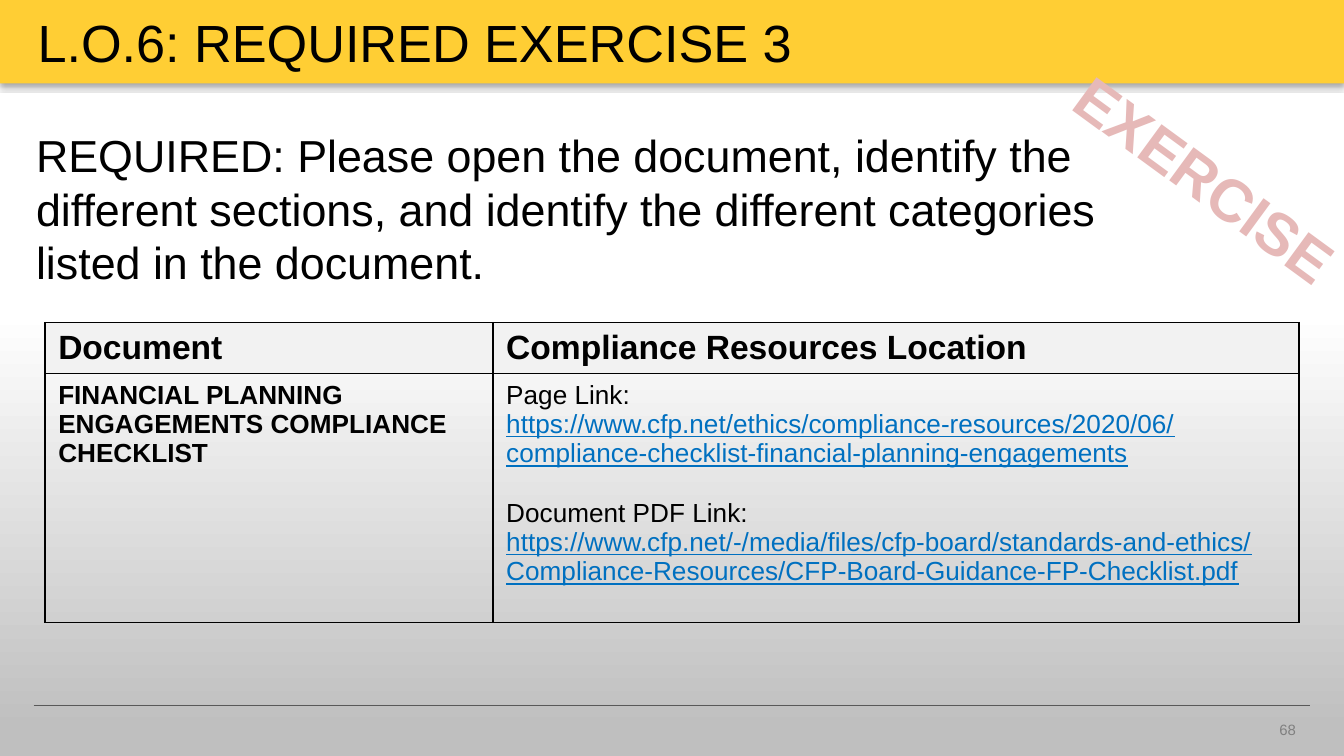
import pptx
import pptx.util
import pptx.oxml
import pptx.dml.color
import pptx.enum.shapes
import pptx.enum.text
import lxml.etree

Inches, Pt = pptx.util.Inches, pptx.util.Pt
RGB = pptx.dml.color.RGBColor
SHAPE = pptx.enum.shapes.MSO_SHAPE
ANCHOR = pptx.enum.text.MSO_ANCHOR
ALIGN = pptx.enum.text.PP_ALIGN
NS = 'xmlns:a="http://schemas.openxmlformats.org/drawingml/2006/main"'

BLACK = RGB(0x00, 0x00, 0x00)
WHITE = RGB(0xFF, 0xFF, 0xFF)
YELLOW = RGB(0xFF, 0xCE, 0x34)
SILVER = RGB(0xBF, 0xBF, 0xBF)
PALE = RGB(0xF2, 0xF2, 0xF2)
DARK = RGB(0x59, 0x59, 0x59)
GRAY = RGB(0x80, 0x80, 0x80)
PINK = RGB(0xE6, 0xB9, 0xB8)
BLUE = RGB(0x00, 0x70, 0xC0)


def add_run(para, text, size, color=BLACK, bold=False, under=False):
    run = para.add_run()
    run.text = text
    font = run.font
    font.name, font.size, font.bold = "Arial", Pt(size), bold
    font.underline = under
    font.color.rgb = color


def add_box(left, top, width, height):
    box = slide.shapes.add_textbox(
        Inches(left), Inches(top), Inches(width), Inches(height))
    box.text_frame.word_wrap = True
    return box


# Wide 16:9 slide
deck = pptx.Presentation()
deck.slide_width = Inches(10)
deck.slide_height = Inches(10 * 9 / 16)
slide = deck.slides.add_slide(deck.slide_layouts[5])

# Title band and shaded page
band = slide.shapes.add_shape(SHAPE.RECTANGLE, 0, 0, Inches(10), Inches(0.62))
band.fill.solid()
band.fill.fore_color.rgb = YELLOW
page = slide.shapes.add_shape(
    SHAPE.RECTANGLE, 0, Inches(0.69), Inches(10), Inches(4.94))
page.fill.gradient()
page.fill.gradient_angle = 90
for stop, place, color in zip(
        page.fill.gradient_stops, (0.04, 0.67), (SILVER, WHITE)):
    stop.position = place
    stop.color.rgb = color
for shape in (band, page):
    shape.line.fill.background()
    shape.shadow.inherit = False
    glow = shape._element.spPr.find(pptx.oxml.ns.qn("a:effectLst"))
    glow.append(lxml.etree.fromstring(
        f'<a:outerShdw {NS} blurRad="39370" dist="22860" dir="5400000" '
        'rotWithShape="0"><a:srgbClr val="000000"><a:alpha val="35000"/>'
        '</a:srgbClr></a:outerShdw>'))

# Footer rule
rule = slide.shapes.add_connector(
    pptx.enum.shapes.MSO_CONNECTOR.STRAIGHT,
    Inches(0.25), Inches(5.25), Inches(9.75), Inches(5.25))
rule.line.color.rgb = DARK
rule.line.width = Pt(0.75)
rule._element.spPr.append(
    lxml.etree.fromstring(f"<a:effectLst {NS}/>"))

# Slanted stamp
stamp = add_box(7.68, 1.01, 2.58, 0.64)
stamp.rotation = 36.2
para = stamp.text_frame.paragraphs[0]
para.alignment = ALIGN.CENTER
add_run(para, "EXERCISE", 32, PINK, bold=True)

# Title, raised above the band
title = slide.shapes.title
title.left, title.top = Inches(0.18), Inches(0)
title.width, title.height = Inches(7.56), Inches(0.62)
slide.shapes._spTree.append(title._element)
frame = title.text_frame
frame.vertical_anchor = ANCHOR.MIDDLE
frame.word_wrap = True
frame.auto_size = pptx.enum.text.MSO_AUTO_SIZE.NONE
frame.paragraphs[0].alignment = ALIGN.LEFT
add_run(frame.paragraphs[0], "L.O.6: REQUIRED EXERCISE 3", 28)

# Task
task = add_box(0.17, 0.9, 8.33, 4)
add_run(task.text_frame.paragraphs[0],
        "REQUIRED: Please open the document, identify the different "
        "sections, and identify the different categories listed in the "
        "document.", 24)

# Table of documents
table = slide.shapes.add_table(
    2, 2, Inches(1 / 3), Inches(2.4), Inches(28 / 3), Inches(2.23)).table
for col, width in zip(table.columns, (10 / 3, 6)):
    col.width = Inches(width)
for row, height in zip(table.rows, (0.38, 1.85)):
    row.height = Inches(height)
for cell in table.iter_cells():
    props = cell._tc.get_or_add_tcPr()
    for side in "LRTB":
        props.append(lxml.etree.fromstring(
            f'<a:ln{side} {NS} w="12700"><a:solidFill>'
            f'<a:srgbClr val="{BLACK}"/></a:solidFill></a:ln{side}>'))
    cell.fill.background()

for col, text in enumerate(("Document", "Compliance Resources Location")):
    cell = table.cell(0, col)
    cell.margin_bottom = Inches(0.03)
    cell.fill.solid()
    cell.fill.fore_color.rgb = PALE
    add_run(cell.text_frame.paragraphs[0], text, 18, bold=True)

add_run(table.cell(1, 0).text_frame.paragraphs[0],
        "FINANCIAL PLANNING ENGAGEMENTS COMPLIANCE CHECKLIST", 14, bold=True)

links = (
    ("Page Link:",
     "https://www.cfp.net/ethics/compliance-resources/2020/06/"
     "compliance-checklist-financial-planning-engagements"),
    ("Document PDF Link:",
     "https://www.cfp.net/-/media/files/cfp-board/standards-and-ethics/"
     "Compliance-Resources/CFP-Board-Guidance-FP-Checklist.pdf"),
)
frame = table.cell(1, 1).text_frame
for i, (label, link) in enumerate(links):
    para = frame.add_paragraph() if i else frame.paragraphs[0]
    if i:
        para.space_before = Pt(16)
    add_run(para, label, 14)
    add_run(frame.add_paragraph(), link, 14, BLUE, under=True)

# Slide number
num = add_box(9.42, 5.31, 0.58, 0.3)
add_run(num.text_frame.paragraphs[0], "68", 8, GRAY)

deck.save("out.pptx")
